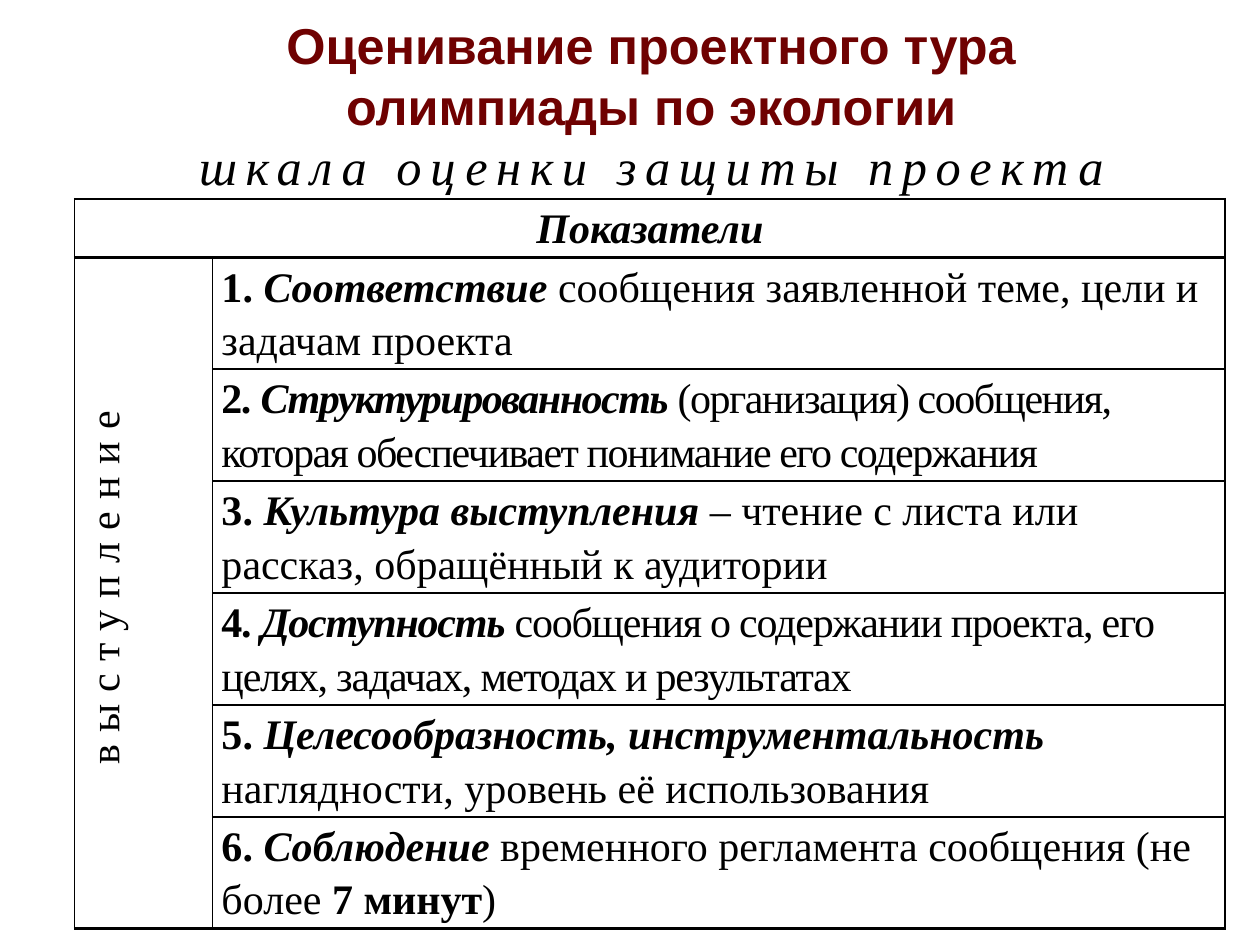
from dataclasses import dataclass

from lxml.etree import SubElement
from pptx import Presentation
from pptx.dml.color import RGBColor
from pptx.enum.text import MSO_ANCHOR as Anchor, PP_ALIGN as Align
from pptx.oxml.ns import qn
from pptx.util import Inches, Pt


@dataclass(frozen=True)
class Theme:
    heading_font: str = "Arial"
    body_font: str = "Times New Roman"
    heading: str = "6F0101"
    ink: str = "000000"
    paper: str = "FFFFFF"
    heading_size: float = 28.8
    body_size: float = 24
    line_pitch: float = 30.6
    side_rule: float = 1
    row_rule: float = 1.5


@dataclass(frozen=True)
class Span:
    text: str
    bold: bool = False
    italic: bool = False
    spacing: float = 0


def criterion(number, term, rest, spacing=0):
    """Numbered bold term followed by plain wording."""
    return [Span(f"{number}. ", True, False, spacing),
            Span(term, True, True, spacing),
            Span(rest, spacing=spacing)]


TITLE_LINES = ["Оценивание проектного тура", "олимпиады по экологии"]
SUBTITLE = [Span("шкала оценки защиты проект", italic=True, spacing=4.93),
            Span("а", italic=True)]
HEADER = [Span("Показатели", True, True)]
GROUP = [Span("выступление", spacing=7)]
CRITERIA = [
    criterion(1, "Соответствие", " сообщения заявленной теме, цели и задачам проекта"),
    criterion(2, "Структурированность",
              " (организация) сообщения, которая обеспечивает понимание его содержания", -0.85),
    criterion(3, "Культура выступления",
              " – чтение с листа или рассказ, обращённый к аудитории"),
    criterion(4, "Доступность",
              " сообщения о содержании проекта, его целях, задачах, методах и результатах", -0.7),
    criterion(5, "Целесообразность, инструментальность ",
              "наглядности, уровень её использования"),
    criterion(6, "Соблюдение", " временного регламента сообщения (не более ")
    + [Span("7 минут", True), Span(")")],
]


class SlideBuilder:
    def __init__(self, deck, theme):
        self.theme = theme
        self.slide = deck.slides.add_slide(deck.slide_layouts[6])
        self.width, self.height = deck.slide_width, deck.slide_height

    def area(self, left, top, width, height):
        """Turn percentages of the slide into lengths."""
        return (int(left * self.width / 100), int(top * self.height / 100),
                int(width * self.width / 100), int(height * self.height / 100))

    def add_span(self, para, span, size, font, color):
        run = para.add_run()
        run.text = span.text
        run.font.size, run.font.name = Pt(size), font
        run.font.bold, run.font.italic = span.bold, span.italic
        run.font.color.rgb = RGBColor.from_string(color)
        if span.spacing:
            run._r.get_or_add_rPr().set("spc", str(round(span.spacing * 100)))

    def title(self, lines, subtitle, *shares):
        theme = self.theme
        box = self.slide.shapes.add_textbox(*self.area(*shares))
        frame = box.text_frame
        frame.word_wrap, frame.vertical_anchor = True, Anchor.MIDDLE
        para = frame.paragraphs[0]
        para.alignment = Align.CENTER
        for line in lines:
            self.add_span(para, Span(line, True), theme.heading_size,
                          theme.heading_font, theme.heading)
            para.add_line_break()
        for span in subtitle:
            self.add_span(para, span, theme.heading_size, theme.body_font, theme.ink)

    def style_cell(self, cell):
        theme = self.theme
        cell.margin_left = cell.margin_right = Inches(0.07)
        cell.margin_top = cell.margin_bottom = 0
        cell.fill.solid()
        cell.fill.fore_color.rgb = RGBColor.from_string(theme.paper)
        properties = cell._tc.get_or_add_tcPr()
        for index, side in enumerate("LRTB"):
            weight = theme.side_rule if side in "LR" else theme.row_rule
            rule = SubElement(properties, qn(f"a:ln{side}"), w=str(Pt(weight)))
            fill = SubElement(rule, qn("a:solidFill"))
            SubElement(fill, qn("a:srgbClr"), val=theme.ink)
            properties.insert(index, rule)

    def fill_cell(self, cell, spans, alignment=Align.LEFT):
        theme = self.theme
        para = cell.text_frame.paragraphs[0]
        para.alignment, para.line_spacing = alignment, Pt(theme.line_pitch)
        for span in spans:
            self.add_span(para, span, theme.body_size, theme.body_font, theme.ink)
        return para

    def criteria_table(self, header, group, criteria, *shares, group_share, header_share):
        left, top, width, height = self.area(*shares)
        last = len(criteria)
        table = self.slide.shapes.add_table(last + 1, 2, left, top, width, height).table
        table.first_row = table.horz_banding = False
        for column, share in zip(table.columns, (group_share, 1 - group_share)):
            column.width = int(width * share)
        row_shares = [header_share] + [(1 - header_share) / last] * last
        for row, share in zip(table.rows, row_shares):
            row.height = int(height * share)
        for cell in table.iter_cells():
            self.style_cell(cell)

        table.cell(0, 0).merge(table.cell(0, 1))
        self.fill_cell(table.cell(0, 0), header, Align.CENTER)
        label = table.cell(1, 0)
        label.merge(table.cell(last, 0))
        label._tc.get_or_add_tcPr().set("vert", "vert270")
        para = self.fill_cell(label, group, Align.CENTER)
        para._p.get_or_add_pPr().set("marL", str(Inches(0.08)))
        for row, spans in enumerate(criteria, 1):
            self.fill_cell(table.cell(row, 1), spans)


def main():
    deck = Presentation()
    deck.slide_width, deck.slide_height = Inches(10), Inches(7.5)
    page = SlideBuilder(deck, Theme())
    page.title(TITLE_LINES, SUBTITLE, 6.7, 2.75, 90, 16.7)
    page.criteria_table(HEADER, GROUP, CRITERIA, 5.93, 21.07, 91.3, 77.2,
                        group_share=0.12, header_share=0.08)
    deck.save("out.pptx")


if __name__ == "__main__":
    main()
